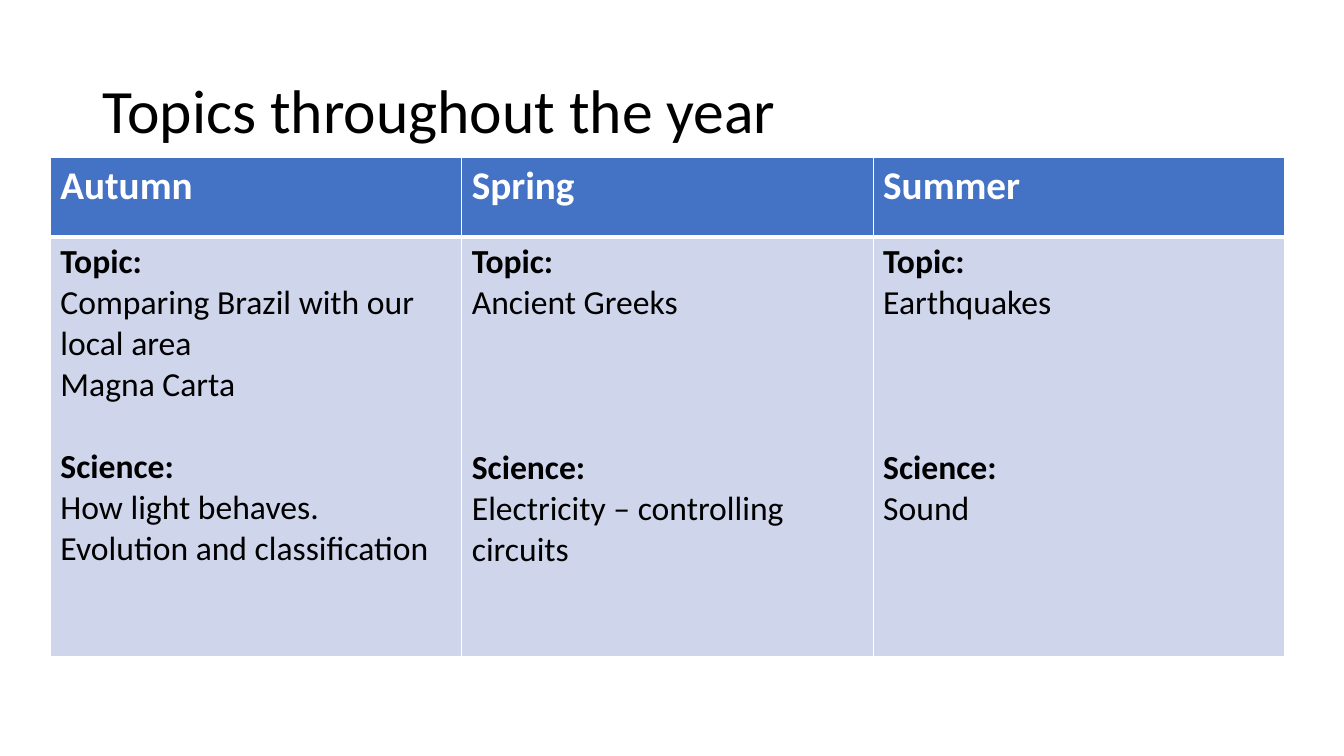
from lxml import etree
from pptx import Presentation
from pptx.dml.color import RGBColor
from pptx.enum.text import MSO_ANCHOR
from pptx.oxml.ns import qn
from pptx.util import Inches, Pt

MIDDLE = MSO_ANCHOR.MIDDLE
FONT = "Calibri"
COLOURS = {"text": "000000", "white": "FFFFFF", "header": "4472C4", "body": "CFD5EA"}
LINE_HEIGHT = 29.3  # one 24 pt line, in points
HEADER_SHARE = 0.16
TERMS = {
    "Autumn": {
        "Topic:": ["Comparing Brazil with our local area", "Magna Carta"],
        "Science:": ["How light behaves.", "Evolution and classification"],
    },
    "Spring": {
        "Topic:": ["Ancient Greeks"],
        "Science:": ["Electricity – controlling circuits"],
    },
    "Summer": {"Topic:": ["Earthquakes"], "Science:": ["Sound"]},
}
# Blank lines that keep the Science headings level across the terms
SCIENCE_GAPS = {"Autumn": 1, "Spring": 3, "Summer": 3}


def write(para, text, size, colour, bold=False):
    para.text = text
    for span in para.runs:
        span.font.name = FONT
        span.font.size = Pt(size)
        span.font.bold = bold
        span.font.color.rgb = RGBColor.from_string(COLOURS[colour])


def style_cell(cell, fill, bottom_width):
    """Draw white borders and a solid fill; the borders must come first in the XML."""
    properties = cell._tc.get_or_add_tcPr()
    for side, width in {"L": 1, "R": 1, "T": 1, "B": bottom_width}.items():
        line = etree.SubElement(properties, qn(f"a:ln{side}"), w=str(Pt(width)))
        solid = etree.SubElement(line, qn("a:solidFill"))
        etree.SubElement(solid, qn("a:srgbClr"), val=COLOURS["white"])
    cell.fill.solid()
    cell.fill.fore_color.rgb = RGBColor.from_string(COLOURS[fill])


def add_title(page, box, text):
    frame = page.shapes.add_textbox(*box).text_frame
    frame.word_wrap = True
    frame.vertical_anchor = MIDDLE
    para = frame.paragraphs[0]
    para.line_spacing = 0.9
    write(para, text, 44, "text")


def fill_subjects(cell, subjects, gap):
    frame = cell.text_frame
    for heading, topics in subjects.items():
        first = heading == "Topic:"
        para = frame.paragraphs[0] if first else frame.add_paragraph()
        if not first:
            para.space_before = Pt(gap * LINE_HEIGHT)
        write(para, heading, 24, "text", bold=True)
        for topic in topics:
            write(frame.add_paragraph(), topic, 24, "text")


def add_terms_table(page, box):
    table = page.shapes.add_table(2, len(TERMS), *box).table
    height = box[3]
    table.rows[0].height = int(height * HEADER_SHARE)
    table.rows[1].height = height - table.rows[0].height
    for column, (term, subjects) in enumerate(TERMS.items()):
        header, body = table.cell(0, column), table.cell(1, column)
        style_cell(header, "header", 3)
        style_cell(body, "body", 1)
        write(header.text_frame.paragraphs[0], term, 28, "white", bold=True)
        fill_subjects(body, subjects, SCIENCE_GAPS[term])


def main():
    deck = Presentation()
    deck.slide_width, deck.slide_height = Inches(13.33), Inches(7.5)
    page = deck.slides.add_slide(deck.slide_layouts[6])
    title_box = [Inches(length) for length in (0.92, 0.4, 11.5, 1.45)]
    table_box = [Inches(length) for length in (0.5, 1.56, 12.24, 4.95)]
    add_title(page, title_box, "Topics throughout the year")
    add_terms_table(page, table_box)
    deck.save("out.pptx")


if __name__ == "__main__":
    main()
